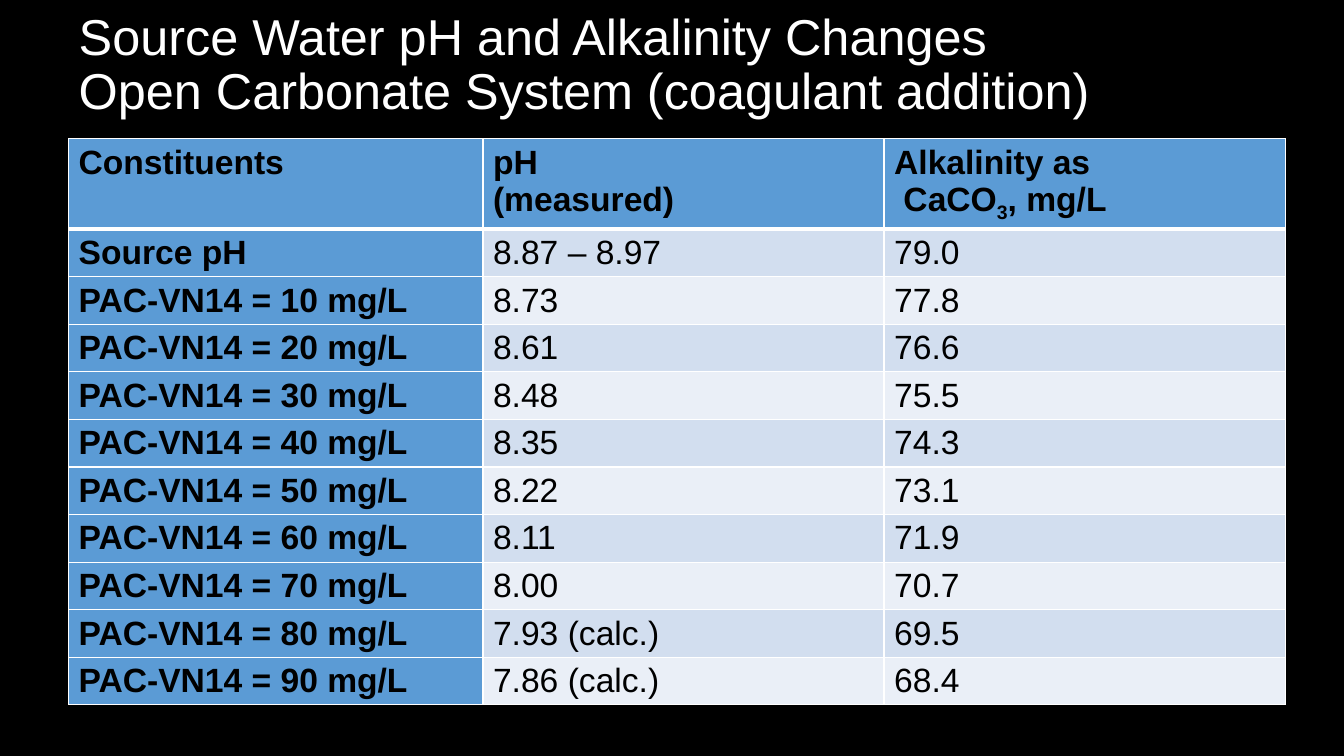
from dataclasses import dataclass

from lxml.etree import SubElement
from pptx import Presentation
from pptx.dml.color import RGBColor
from pptx.enum.text import MSO_ANCHOR, MSO_AUTO_SIZE, PP_ALIGN
from pptx.oxml.ns import qn
from pptx.util import Pt


@dataclass(frozen=True)
class Theme:
    font: str = "Arial"
    title_size: int = 36
    table_size: int = 24
    background: str = "000000"
    title_color: str = "FFFFFF"
    table_color: str = "000000"
    border: str = "FFFFFF"
    heading_fill: str = "5B9BD5"
    bands: tuple = ("D2DEEF", "EAEFF7")


THEME = Theme()

TITLE = "Source Water pH and Alkalinity Changes\vOpen Carbonate System (coagulant addition)"
HEADINGS = ["Constituents", "pH\n(measured)", "Alkalinity as"]
PH_VALUES = ["8.87 – 8.97", "8.73", "8.61", "8.48", "8.35", "8.22",
             "8.11", "8.00", "7.93 (calc.)", "7.86 (calc.)"]
ALKALINITY = ["79.0", "77.8", "76.6", "75.5", "74.3", "73.1", "71.9", "70.7", "69.5", "68.4"]
CONSTITUENTS = ["Source pH"] + [f"PAC-VN14 = {dose} mg/L" for dose in range(10, 100, 10)]


def style_font(font, size, color, bold=False):
    font.name = THEME.font
    font.size = Pt(size)
    font.bold = bold
    font.color.rgb = RGBColor.from_string(color)


def add_title(slide, left, top, width, height):
    title = slide.shapes.title
    title.left, title.top, title.width, title.height = Pt(left), Pt(top), Pt(width), Pt(height)
    frame = title.text_frame
    frame.text = TITLE
    frame.word_wrap = True
    frame.auto_size = MSO_AUTO_SIZE.NONE
    frame.vertical_anchor = MSO_ANCHOR.MIDDLE
    heading = frame.paragraphs[0]
    heading.alignment = PP_ALIGN.LEFT
    heading.line_spacing = 0.9
    style_font(heading.font, THEME.title_size, THEME.title_color)


def add_borders(cell, widths):
    """Draw the left, right, top and bottom borders, widths in points."""
    properties = cell._tc.get_or_add_tcPr()
    for side, width in zip("LRTB", widths):
        line = SubElement(properties, qn(f"a:ln{side}"), w=str(Pt(width)))
        SubElement(SubElement(line, qn("a:solidFill")), qn("a:srgbClr"), val=THEME.border)


def add_formula(cell):
    """Second heading line, with the subscript of calcium carbonate."""
    formula = cell.text_frame.add_paragraph()
    for part in (" CaCO", "3", ", mg/L"):
        run = formula.add_run()
        run.text = part
        if part == "3":
            run.font._element.set("baseline", "-25000")


def add_results_table(slide, left, top, width, height):
    records = [HEADINGS, *zip(CONSTITUENTS, PH_VALUES, ALKALINITY)]
    frame = slide.shapes.add_table(len(records), len(HEADINGS),
                                   Pt(left), Pt(top), Pt(width), Pt(height))
    results = frame.table
    results.first_col = True

    # The first column is wider; the other two share the rest
    first_width = 296
    other_width = (width - first_width) / 2
    for column, column_width in zip(results.columns, (first_width, other_width, other_width)):
        column.width = Pt(column_width)

    for r, record in enumerate(records):
        results.rows[r].height = Pt(29.5)
        for c, value in enumerate(record):
            cell = results.cell(r, c)
            cell.text = value
            if value == HEADINGS[-1]:
                add_formula(cell)
            is_heading = r == 0 or c == 0
            add_borders(cell, (1, 1, 3 if r == 1 else 1, 3 if r == 0 else 1))
            cell.fill.solid()
            fill = THEME.heading_fill if is_heading else THEME.bands[(r - 1) % 2]
            cell.fill.fore_color.rgb = RGBColor.from_string(fill)
            for paragraph in cell.text_frame.paragraphs:
                style_font(paragraph.font, THEME.table_size, THEME.table_color, is_heading)
    frame.height = Pt(height)


def main():
    deck = Presentation()
    deck.slide_width, deck.slide_height = Pt(960), Pt(540)
    slide = deck.slides.add_slide(deck.slide_layouts[5])
    slide.background.fill.solid()
    slide.background.fill.fore_color.rgb = RGBColor.from_string(THEME.background)

    # Title above, measurements below
    add_title(slide, 49, 0, 845, 94.5)
    add_results_table(slide, 49, 99, 869, 425)
    deck.save("out.pptx")


if __name__ == "__main__":
    main()
